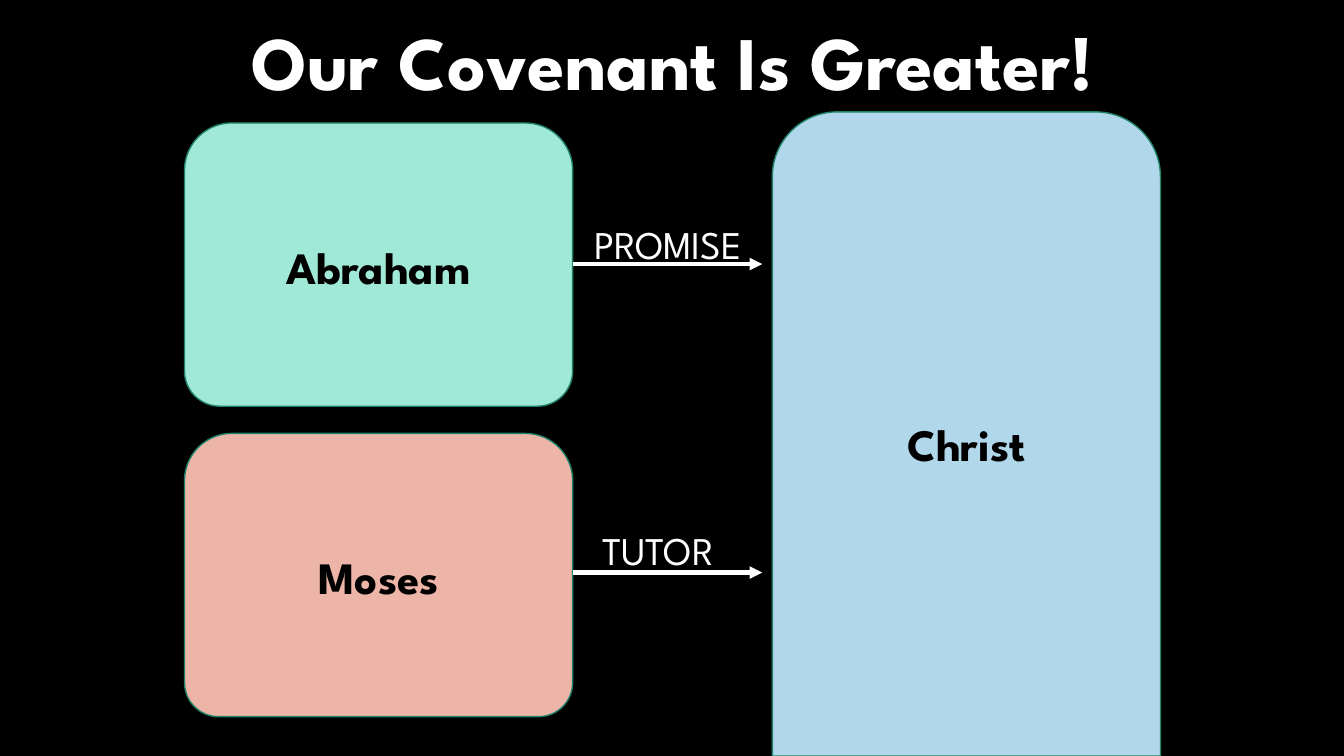
from lxml import etree
from pptx import Presentation
from pptx.dml.color import RGBColor
from pptx.enum import shapes, text
from pptx.oxml import ns
from pptx.util import Inches, Pt

BLACK = RGBColor(0x00, 0x00, 0x00)
WHITE = RGBColor(0xFF, 0xFF, 0xFF)
MINT = RGBColor(0xA0, 0xE9, 0xD6)
SALMON = RGBColor(0xEC, 0xB5, 0xA8)
SKY = RGBColor(0xB1, 0xD7, 0xEB)
GREEN = RGBColor(0x1E, 0x81, 0x68)
FONT = "League Spartan"

TITLE = "Our Covenant Is Greater!"
LEFT_X, RIGHT_X, BOX_W = 1.83, 7.66, 3.85
# name, left, top, height, fill, top and bottom corner rounding
COVENANTS = [
    ("Moses", LEFT_X, 4.3, 2.81, SALMON, (0.167, 0.12)),
    ("Christ", RIGHT_X, 1.11, 6.39, SKY, (0.167, 0)),
    ("Abraham", LEFT_X, 1.22, 2.81, MINT, (0.167, 0.124)),
]
# label, label left, label top, arrow height on the slide
LINKS = [("TUTOR", 5.58, 5.17, 5.68), ("PROMISE", 5.68, 2.14, 2.62)]
ARROW_START, ARROW_END = LEFT_X + BOX_W, RIGHT_X - 0.1


def write(shape, words, size, color, bold, anchor):
    frame = shape.text_frame
    frame.text = words
    frame.word_wrap = True
    frame.auto_size = text.MSO_AUTO_SIZE.NONE
    frame.vertical_anchor = anchor
    paragraph = frame.paragraphs[0]
    paragraph.alignment = text.PP_ALIGN.CENTER
    paragraph.line_spacing = 1.0
    paragraph.space_before = Pt(0)
    font = paragraph.runs[0].font
    font.name, font.size, font.bold = FONT, Pt(size), bold
    font.color.rgb = color


def add_label(slide, words, left, top):
    label = slide.shapes.add_textbox(
        Inches(left), Inches(top), Inches(1.89), Inches(0.57))
    write(label, words, 28, WHITE, False, text.MSO_ANCHOR.TOP)


def add_covenant(slide, name, left, top, height, fill, corners):
    box = slide.shapes.add_shape(
        shapes.MSO_SHAPE.ROUND_2_SAME_RECTANGLE,
        Inches(left), Inches(top), Inches(BOX_W), Inches(height))
    box.adjustments[0], box.adjustments[1] = corners
    box.shadow.inherit = False
    box.fill.solid()
    box.fill.fore_color.rgb = fill
    box.line.color.rgb = GREEN
    box.line.width = Pt(1)
    write(box, name, 32, BLACK, True, text.MSO_ANCHOR.MIDDLE)


def add_arrow(slide, y):
    arrow = slide.shapes.add_connector(
        shapes.MSO_CONNECTOR.STRAIGHT,
        Inches(ARROW_START), Inches(y), Inches(ARROW_END), Inches(y))
    arrow.line.color.rgb = WHITE
    arrow.line.width = Pt(3)
    etree.SubElement(arrow.line._get_or_add_ln(), ns.qn("a:tailEnd"), type="triangle")
    etree.SubElement(arrow._element.spPr, ns.qn("a:effectLst"))


def main():
    deck = Presentation()
    deck.slide_width, deck.slide_height = Inches(13.33), Inches(7.5)
    slide = deck.slides.add_slide(deck.slide_layouts[5])
    slide.background.fill.solid()
    slide.background.fill.fore_color.rgb = BLACK

    title = slide.shapes.title
    title.left, title.top = Inches(0.59), Inches(0.1)
    title.width, title.height = Inches(12.16), Inches(1.01)
    write(title, TITLE, 54, WHITE, True, text.MSO_ANCHOR.TOP)

    for words, left, top, _ in LINKS:
        add_label(slide, words, left, top)
    for covenant in COVENANTS:
        add_covenant(slide, *covenant)
    for *_, y in LINKS:
        add_arrow(slide, y)
    deck.save("out.pptx")


if __name__ == "__main__":
    main()
